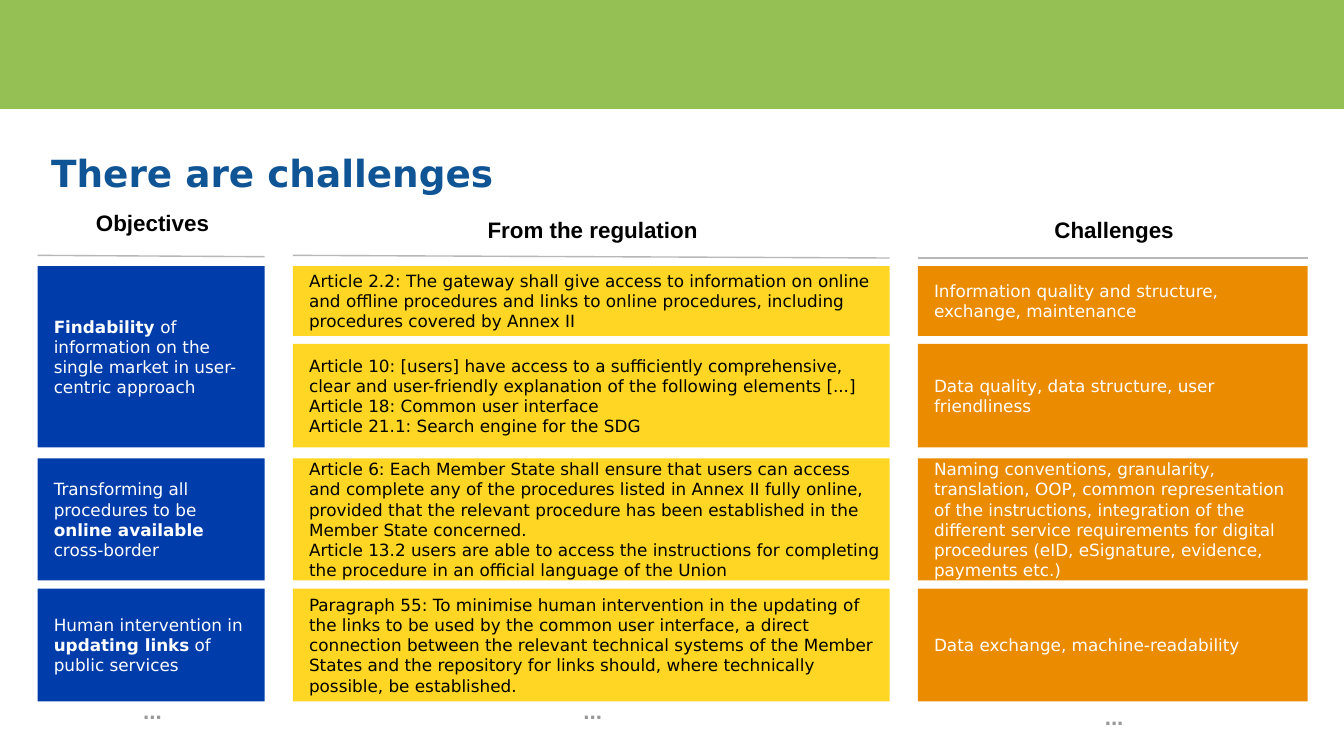
from dataclasses import dataclass

from lxml import etree
from pptx import Presentation
from pptx.dml.color import RGBColor
from pptx.enum.shapes import MSO_CONNECTOR, MSO_SHAPE
from pptx.enum.text import MSO_ANCHOR, MSO_AUTO_SIZE, PP_ALIGN
from pptx.oxml.ns import qn
from pptx.util import Inches, Pt

RECTANGLE = MSO_SHAPE.RECTANGLE
STRAIGHT = MSO_CONNECTOR.STRAIGHT
MIDDLE = MSO_ANCHOR.MIDDLE
NO_AUTOFIT = MSO_AUTO_SIZE.NONE
LEFT, CENTER = PP_ALIGN.LEFT, PP_ALIGN.CENTER


@dataclass(frozen=True)
class Theme:
    """Colours, typefaces and type sizes of the slide."""
    band: str = "95C154"
    title: str = "0F5494"
    blue: str = "003DAB"
    yellow: str = "FFD624"
    orange: str = "EB8C00"
    rule: str = "B7B7B7"
    muted: str = "999999"
    black: str = "000000"
    white: str = "FFFFFF"
    body_font: str = "DejaVu Sans"
    heading_font: str = "Arial"
    title_size: float = 20
    heading_size: float = 12
    card_size: float = 9
    rule_width: float = 0.75


@dataclass(frozen=True)
class Column:
    """Content and fine placement of one column, relative to its box."""
    heading: str
    fill: str
    ink: str
    cards: tuple
    heading_height: float
    rule_ends: tuple
    more_top: float
    more_height: float = 0.22


THEME = Theme()
COLUMN_TOP = 1.45
ROWS = ((0.53, 0.52), (1.11, 0.77), (1.96, 0.91), (2.93, 0.84))
CARD_INDENT = 0.12
CARD_RIGHT_MARGIN = 0.06
LABEL_SHIFT = 0.01

COLUMNS = (
    ((0.28, COLUMN_TOP, 1.69), Column(
        "Objectives", THEME.blue, THEME.white,
        (
            (0, 1, "**Findability **of information on the single market in user-centric approach"),
            (2, 2, "Transforming all procedures to be **online available** cross-border"),
            (3, 3, "Human intervention in **updating links** of public services"),
        ),
        0.41, (0.45, 0.46), 3.7, 0.28)),
    ((2.18, COLUMN_TOP, 4.44), Column(
        "From the regulation", THEME.yellow, THEME.black,
        (
            (0, 0, "Article 2.2: The gateway shall give access to information on online and offline "
                   "procedures and links to online procedures, including procedures covered by Annex II"),
            (1, 1, "Article 10: [users] have access to a sufficiently comprehensive, clear and "
                   "user-friendly explanation of the following elements [...]\n"
                   "Article 18: Common user interface\n"
                   "Article 21.1: Search engine for the SDG"),
            (2, 2, "Article 6: Each Member State shall ensure that users can access and complete any of "
                   "the procedures listed in Annex II fully online, provided that the relevant procedure "
                   "has been established in the Member State concerned.\n"
                   "Article 13.2 users are able to access the instructions for completing the procedure "
                   "in an official language of the Union"),
            (3, 3, "Paragraph 55: To minimise human intervention in the updating of the links to be used "
                   "by the common user interface, a direct connection between the relevant technical "
                   "systems of the Member States and the repository for links should, where technically "
                   "possible, be established."),
        ),
        0.52, (0.45, 0.47), 3.73)),
    ((6.83, COLUMN_TOP, 2.9), Column(
        "Challenges", THEME.orange, THEME.white,
        (
            (0, 0, "Information quality and structure, exchange, maintenance"),
            (1, 1, "Data quality, data structure, user friendliness"),
            (2, 2, "Naming conventions, granularity, translation, OOP, common representation of the "
                   "instructions, integration of the different service requirements for digital "
                   "procedures (eID, eSignature, evidence, payments etc.)"),
            (3, 3, "Data exchange, machine-readability"),
        ),
        0.52, (0.47, 0.47), 3.77)),
)


def color(value):
    """Return the RGB colour of a hex string."""
    return RGBColor.from_string(value)


def write(shape, text, font_name, size, ink, bold=False, align=LEFT, margins=(0, 0, 0), indent=0):
    """Fill a shape with paragraphs in which double asterisks toggle bold."""
    frame = shape.text_frame
    frame.word_wrap = True
    frame.auto_size = NO_AUTOFIT
    frame.vertical_anchor = MIDDLE
    left, right, vertical = map(Inches, margins)
    frame.margin_left, frame.margin_right = left, right
    frame.margin_top = frame.margin_bottom = vertical
    for number, line in enumerate(text.split("\n")):
        paragraph = frame.add_paragraph() if number else frame.paragraphs[0]
        paragraph.alignment = align
        if indent:
            paragraph._p.get_or_add_pPr().set("marL", str(Inches(indent)))
        for position, part in enumerate(line.split("**")):
            if part:
                run = paragraph.add_run()
                run.text = part
                run.font.name = font_name
                run.font.size = Pt(size)
                run.font.bold = bold or position % 2 == 1
                run.font.color.rgb = color(ink)


def add_block(slide, box, fill):
    """Add a plain filled rectangle."""
    block = slide.shapes.add_shape(RECTANGLE, *map(Inches, box))
    block.shadow.inherit = False
    block.fill.solid()
    block.fill.fore_color.rgb = color(fill)
    block.line.fill.background()
    return block


def add_label(slide, box, text, ink):
    """Add a centred bold label."""
    label = slide.shapes.add_textbox(*map(Inches, box))
    write(label, text, THEME.heading_font, THEME.heading_size, ink, True, CENTER)


def add_rule(slide, start, end):
    """Add a thin grey line between two points."""
    rule = slide.shapes.add_connector(STRAIGHT, *map(Inches, start + end))
    rule.line.color.rgb = color(THEME.rule)
    rule.line.width = Pt(THEME.rule_width)
    etree.SubElement(rule._element.spPr, qn("a:effectLst"))


def add_title(slide, box, text):
    """Place and format the title placeholder."""
    title = slide.shapes.title
    title.left, title.top, title.width, title.height = map(Inches, box)
    write(title, text, THEME.body_font, THEME.title_size, THEME.title, True,
          margins=(0.1, 0.1, 0.05))


def add_column(slide, box, column):
    """Draw a heading, its rule, the cards below and the closing dots."""
    left, top, width = box
    label_left = left + LABEL_SHIFT
    add_label(slide, (label_left, top, width, column.heading_height), column.heading, THEME.black)
    rule_start, rule_end = column.rule_ends
    add_rule(slide, (left, top + rule_start), (left + width, top + rule_end))
    for first, last, text in column.cards:
        card_top = ROWS[first][0]
        card_height = sum(ROWS[last]) - card_top
        card = add_block(slide, (left, top + card_top, width, card_height), column.fill)
        write(card, text, THEME.body_font, THEME.card_size, column.ink,
              margins=(0, CARD_RIGHT_MARGIN, 0), indent=CARD_INDENT)
    add_label(slide, (label_left, top + column.more_top, width, column.more_height),
              "...", THEME.muted)


def main():
    """Build and save the presentation."""
    presentation = Presentation()
    presentation.slide_width = Inches(10)
    presentation.slide_height = Inches(10) * 9 // 16
    slide = presentation.slides.add_slide(presentation.slide_layouts.get_by_name("Title Only"))
    add_block(slide, (0, 0, 10, 0.81), THEME.band)
    add_title(slide, (0.28, 0.9, 9.44, 0.77), "There are challenges")
    for box, column in COLUMNS:
        add_column(slide, box, column)
    presentation.save("out.pptx")


if __name__ == "__main__":
    main()
